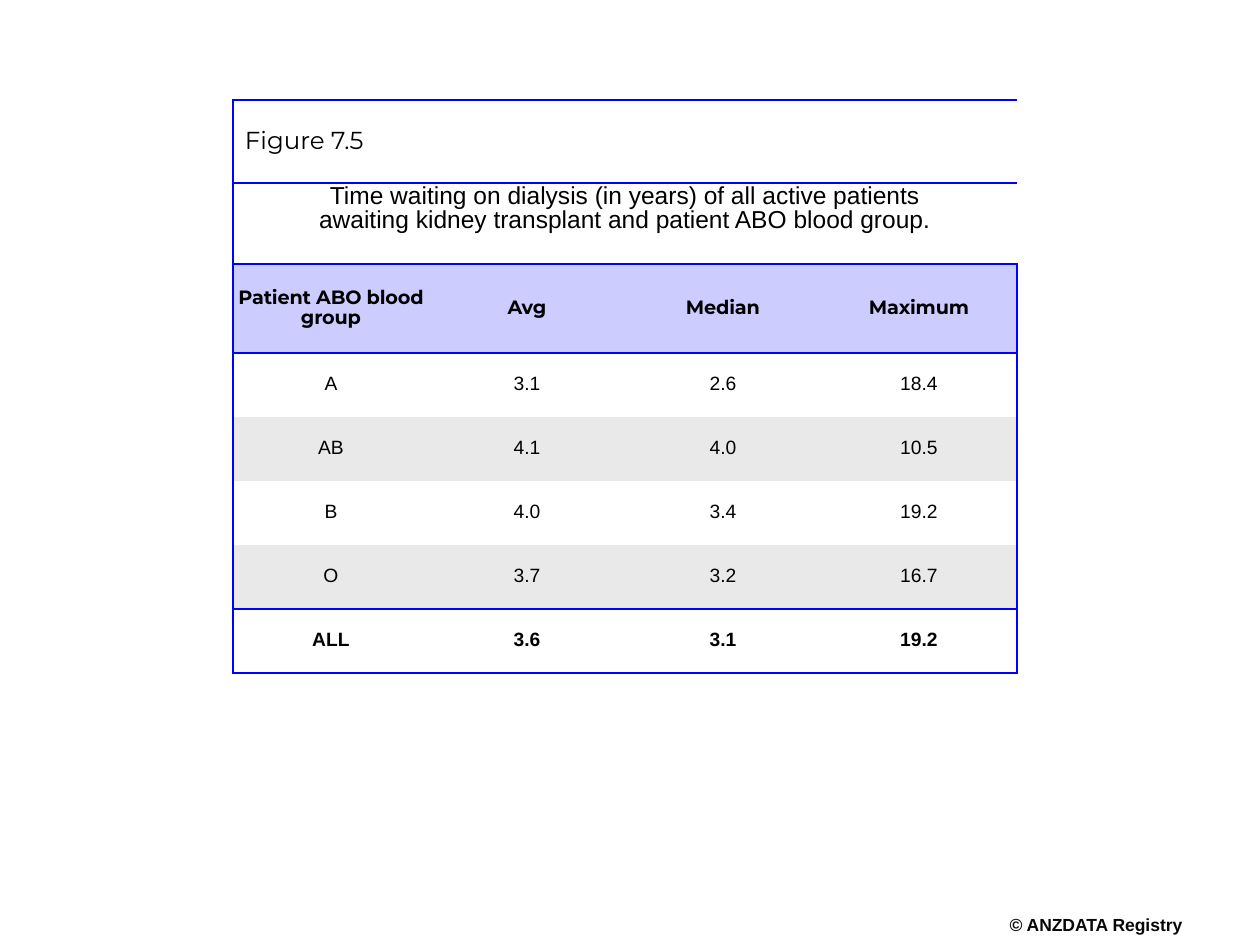
from lxml import etree
from pptx import Presentation, util as u
from pptx.dml.color import RGBColor
from pptx.enum import text
from pptx.oxml.ns import qn

WHITE = RGBColor(0xFF, 0xFF, 0xFF)
BLACK = RGBColor(0x00, 0x00, 0x00)
INK = RGBColor(0x08, 0x08, 0x08)
BLUE = RGBColor(0x00, 0x00, 0xFF)
LAVENDER = RGBColor(0xCC, 0xCC, 0xFF)
GREY = RGBColor(0xE9, 0xE9, 0xE9)

ARIAL, MONTSERRAT = "Arial", "Montserrat"
CAPTION = "Figure 7.5"
TITLE = ("Time waiting on dialysis (in years) of all active patients "
         "awaiting kidney transplant and patient ABO blood group.")
HEADER = ["Patient ABO blood group", "Avg", "Median", "Maximum"]
GROUPS = [
    ["A", "3.1", "2.6", "18.4"],
    ["AB", "4.1", "4.0", "10.5"],
    ["B", "4.0", "3.4", "19.2"],
    ["O", "3.7", "3.2", "16.7"],
]
TOTAL = ["ALL", "3.6", "3.1", "19.2"]
ROW_HEIGHTS = [83, 81, 89] + [64] * 5
COL_WIDTH = 196
RULED_ABOVE = {0, 1, 2, 3, 7}


def px(n):
    return u.Emu(round(n * 914400 / 126))


class Deck:
    def __init__(self):
        self.prs = Presentation()
        self.prs.slide_width, self.prs.slide_height = px(1260), px(945)
        self.s = self.prs.slides.add_slide(self.prs.slide_layouts[6])

    def add_text(self, tf, words, size=11, font=ARIAL, bold=False, color=BLACK,
                 align=text.PP_ALIGN.CENTER, after=0, tracking=0):
        p = tf.paragraphs[0]
        p.alignment = align
        p.line_spacing = 0.85
        p.space_after = u.Pt(after)
        r = p.add_run()
        r.text = words
        r.font.size = u.Pt(size)
        r.font.name = font
        r.font.bold = bold
        r.font.color.rgb = color
        if tracking:
            r._r.get_or_add_rPr().set("spc", str(tracking))

    def label(self, x, y, w, h, words, **style):
        tf = self.s.shapes.add_textbox(px(x), px(y), px(w), px(h)).text_frame
        tf.word_wrap = False
        tf.auto_size = text.MSO_AUTO_SIZE.SHAPE_TO_FIT_TEXT
        tf.margin_left = tf.margin_right = tf.margin_top = tf.margin_bottom = 0
        self.add_text(tf, words, **style)

    def table(self, x, y, heights, cols, col_width):
        frame = self.s.shapes.add_table(len(heights), cols, px(x), px(y),
                                        px(cols * col_width), px(sum(heights)))
        table = frame.table
        table.first_row = table.horz_banding = False
        for row, height in zip(table.rows, heights):
            row.height = px(height)
        for col in table.columns:
            col.width = px(col_width)
        return table

    def borders(self, cell, sides):
        tcPr = cell._tc.get_or_add_tcPr()
        for side in "LRTB":
            ln = etree.SubElement(tcPr, qn(f"a:ln{side}"), w=str(u.Pt(1)))
            if side in sides:
                fill = etree.SubElement(ln, qn("a:solidFill"))
                etree.SubElement(fill, qn("a:srgbClr"), val=str(BLUE))
            else:
                etree.SubElement(ln, qn("a:noFill"))

    def rule_table(self, table):
        rows, cols = len(table.rows), len(table.columns)
        for i in range(rows):
            for j in range(cols):
                sides = {"L": j == 0, "R": j == cols - 1,
                         "T": i in RULED_ABOVE,
                         "B": i + 1 in RULED_ABOVE or i == rows - 1}
                self.borders(table.cell(i, j), [k for k, on in sides.items() if on])

    def cell(self, cell, words, fill=None, inset=(5, 5),
             anchor=text.MSO_ANCHOR.MIDDLE, **style):
        cell.margin_left = cell.margin_right = px(inset[0])
        cell.margin_top = cell.margin_bottom = px(inset[1])
        cell.vertical_anchor = anchor
        if fill is None:
            cell.fill.background()
        else:
            cell.fill.solid()
            cell.fill.fore_color.rgb = fill
        self.add_text(cell.text_frame, words, **style)

    def row(self, table, i, values, **style):
        for j, value in enumerate(values):
            self.cell(table.cell(i, j), value, **style)


def main():
    deck = Deck()
    deck.label(1007, 917, 178, 21, "© ANZDATA Registry", size=10, bold=True, color=INK)

    table = deck.table(233, 100, ROW_HEIGHTS, len(HEADER), COL_WIDTH)
    deck.rule_table(table)
    for i in (0, 1):
        table.cell(i, 0).merge(table.cell(i, len(HEADER) - 1))
    deck.cell(table.cell(0, 0), CAPTION, fill=WHITE, inset=(12, 5), size=14,
              font=MONTSERRAT, align=text.PP_ALIGN.LEFT, after=2.7)
    deck.cell(table.cell(1, 0), TITLE, fill=WHITE, inset=(49, 3), size=14,
              anchor=text.MSO_ANCHOR.TOP, after=2.7)
    deck.row(table, 2, HEADER, fill=LAVENDER, font=MONTSERRAT, bold=True, tracking=-10)
    for n, group in enumerate(GROUPS):
        deck.row(table, 3 + n, group, fill=GREY if n % 2 else None)
    deck.row(table, 7, TOTAL, bold=True)

    deck.prs.save("out.pptx")


if __name__ == "__main__":
    main()
